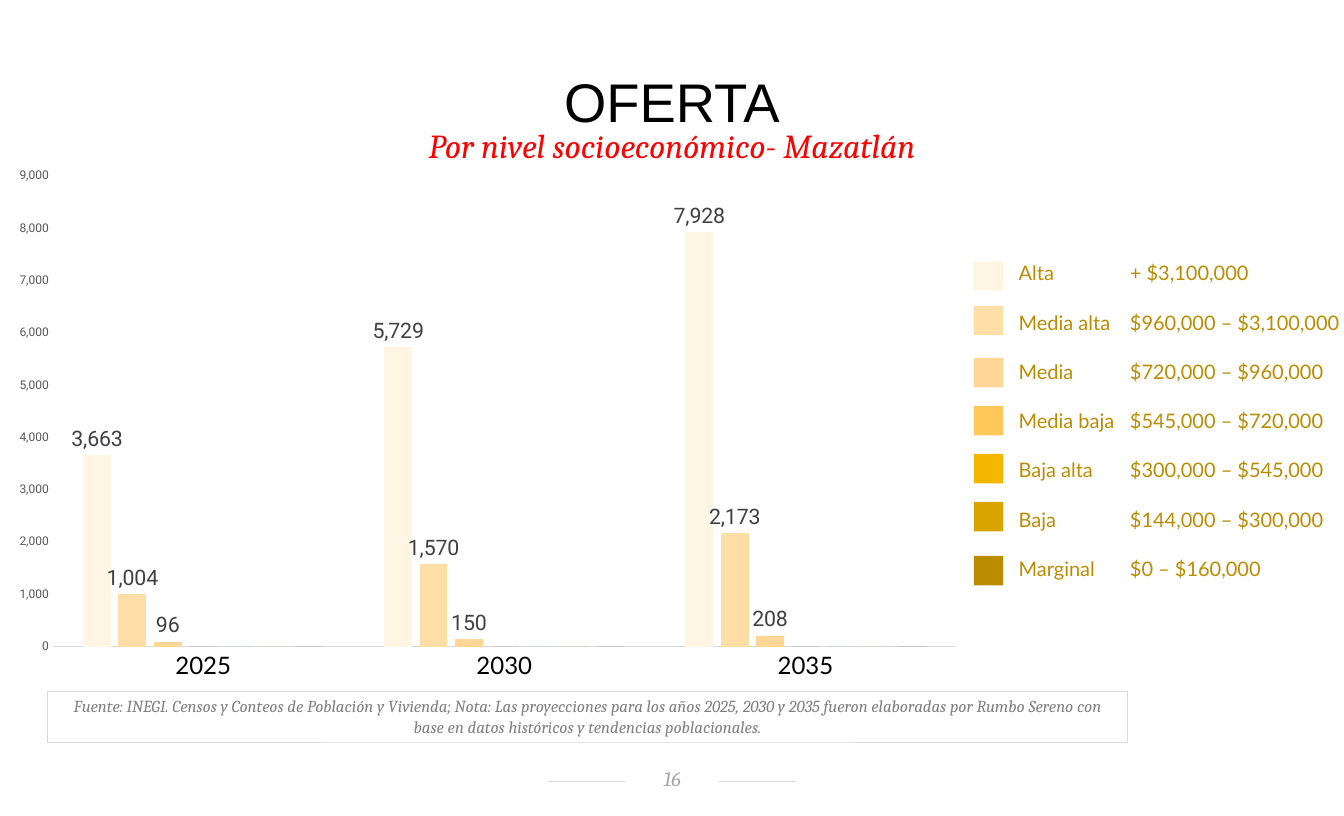
from dataclasses import dataclass

import pptx
import pptx.chart.data
import pptx.dml.color
import pptx.enum.chart
import pptx.enum.shapes
import pptx.enum.text
import pptx.oxml
import pptx.oxml.ns
import pptx.util
from lxml import etree

Pt = pptx.util.Pt
RGBColor = pptx.dml.color.RGBColor
Align = pptx.enum.text.PP_ALIGN
Anchor = pptx.enum.text.MSO_ANCHOR

BLACK = RGBColor(0x00, 0x00, 0x00)
WHITE = RGBColor(0xFF, 0xFF, 0xFF)
RED = RGBColor(0xFF, 0x00, 0x00)
GOLD = RGBColor(0xBC, 0x8C, 0x00)
RULE_GREY = RGBColor(0xD9, 0xD9, 0xD9)
PAGE_GREY = RGBColor(0xA6, 0xA6, 0xA6)
NOTE_GREY = RGBColor(0x80, 0x80, 0x80)
AXIS_GREY = RGBColor(0x59, 0x59, 0x59)
LABEL_GREY = RGBColor(0x40, 0x40, 0x40)


@dataclass
class Box:
    left: float
    top: float
    width: float
    height: float

    def lengths(self):
        return Pt(self.left), Pt(self.top), Pt(self.width), Pt(self.height)


@dataclass
class Level:
    name: str
    price: str
    color: RGBColor
    swatch_top: float


@dataclass
class Supply:
    values: tuple
    color: RGBColor


LEVELS = [
    Level("Alta", "+ $3,100,000", RGBColor(0xFF, 0xF5, 0xE5), 196),
    Level("Media alta", "$960,000 – $3,100,000", RGBColor(0xFF, 0xDD, 0xA7), 229.5),
    Level("Media", "$720,000 – $960,000", RGBColor(0xFF, 0xD6, 0x95), 268.5),
    Level("Media baja", "$545,000 – $720,000", RGBColor(0xFF, 0xC8, 0x59), 304.5),
    Level("Baja alta", "$300,000 – $545,000", RGBColor(0xF3, 0xB7, 0x00), 340.5),
    Level("Baja", "$144,000 – $300,000", RGBColor(0xDA, 0xA4, 0x00), 376.5),
    Level("Marginal", "$0 – $160,000", GOLD, 417),
]
YEARS = ["2025", "2030", "2035"]
NONE_OFFERED = (0, 0, 0)
SUPPLIES = [
    Supply((3663, 5729, 7928), LEVELS[0].color),
    Supply((1004, 1570, 2173), LEVELS[1].color),
    Supply((96, 150, 208), LEVELS[2].color),
    Supply(NONE_OFFERED, RGBColor(0x80, 0x64, 0xA2)),
    Supply(NONE_OFFERED, RGBColor(0x4B, 0xAC, 0xC6)),
    Supply(NONE_OFFERED, RGBColor(0xF7, 0x96, 0x46)),
    Supply(NONE_OFFERED, RGBColor(0x2C, 0x4D, 0x75)),
]


def set_font(font, name: str, size: float, color: RGBColor, italic: bool = False) -> None:
    font.name = name
    font.size = Pt(size)
    font.color.rgb = color
    font.italic = italic


def write(shape, text: str, name: str, size: float, color: RGBColor,
          italic: bool = False, anchor=Anchor.TOP):
    """Put one centred paragraph in a shape and return the paragraph."""
    frame = shape.text_frame
    frame.text = text
    frame.word_wrap = True
    frame.auto_size = pptx.enum.text.MSO_AUTO_SIZE.NONE
    frame.vertical_anchor = anchor
    paragraph = frame.paragraphs[0]
    paragraph.alignment = Align.CENTER
    set_font(paragraph.font, name, size, color, italic)
    return paragraph


def place(shape, box: Box) -> None:
    shape.left, shape.top, shape.width, shape.height = box.lengths()


def add_rectangle(slide, box: Box, fill=None, line=None):
    shape = slide.shapes.add_shape(pptx.enum.shapes.MSO_SHAPE.RECTANGLE, *box.lengths())
    shape.shadow.inherit = False
    if fill is None:
        shape.fill.background()
    else:
        shape.fill.solid()
        shape.fill.fore_color.rgb = fill
    if line is None:
        shape.line.fill.background()
    else:
        shape.line.color.rgb = line
        shape.line.width = Pt(0.75)
    return shape


def add_page_number(slide) -> None:
    rule = slide.shapes.add_connector(pptx.enum.shapes.MSO_CONNECTOR.STRAIGHT,
                                      Pt(411), Pt(586), Pt(597), Pt(586))
    rule.line.color.rgb = RULE_GREY
    rule.line.width = Pt(0.75)
    etree.SubElement(rule.line._get_or_add_ln().getparent(),
                     pptx.oxml.ns.qn("a:effectLst"))
    number = add_rectangle(slide, Box(468.5, 574.5, 71, 21), fill=WHITE)
    write(number, "16", "Cambria", 15.4, PAGE_GREY, True, Anchor.MIDDLE)
    number.text_frame.margin_top = Pt(1.5)


def add_price_table(slide) -> None:
    frame = slide.shapes.add_table(len(LEVELS), 2, *Box(764, 186.5, 246, 258.5).lengths())
    table = frame.table
    table.first_row = table.horz_banding = False
    table.columns[0].width, table.columns[1].width = Pt(83.5), Pt(162.5)
    for row, level in enumerate(LEVELS):
        for column, text in enumerate((level.name, level.price)):
            cell = table.cell(row, column)
            cell.fill.background()
            cell.vertical_anchor = Anchor.MIDDLE
            cell.margin_left = cell.margin_right = cell.margin_top = cell.margin_bottom = 0
            cell.text = text
            set_font(cell.text_frame.paragraphs[0].font, "Lato", 15, GOLD)


def fix_plot_area(chart, x: float, y: float, w: float, h: float) -> None:
    """Set the inner plot area as fractions of the chart."""
    plot_area = chart.plots[0]._element.getparent()
    for old in plot_area.findall(pptx.oxml.ns.qn("c:layout")):
        plot_area.remove(old)
    sizes = "".join(f'<c:{tag} val="{value}"/>'
                    for tag, value in (("x", x), ("y", y), ("w", w), ("h", h)))
    plot_area.insert(0, pptx.oxml.parse_xml(
        f'<c:layout {pptx.oxml.ns.nsdecls("c")}><c:manualLayout>'
        '<c:layoutTarget val="inner"/><c:xMode val="edge"/><c:yMode val="edge"/>'
        f'{sizes}</c:manualLayout></c:layout>'))


def add_supply_chart(slide) -> None:
    data = pptx.chart.data.CategoryChartData(number_format="#,##0")
    data.categories = YEARS
    for number, supply in enumerate(SUPPLIES, 1):
        data.add_series(f"Series {number}", supply.values)
    chart = slide.shapes.add_chart(pptx.enum.chart.XL_CHART_TYPE.COLUMN_CLUSTERED,
                                   *Box(0, 119.5, 731, 399.5).lengths(), data).chart
    chart.has_legend = chart.has_title = False
    set_font(chart.font, "Calibri", 10, BLACK)
    fix_plot_area(chart, 0.054, 0.031, 0.927, 0.884)

    plot = chart.plots[0]
    plot.gap_width, plot.overlap, plot.vary_by_categories = 219, -27, False
    for series, supply in zip(plot.series, SUPPLIES):
        series.format.fill.solid()
        series.format.fill.fore_color.rgb = supply.color
        if any(supply.values):
            labels = series.data_labels
            labels.show_value = True
            labels.number_format, labels.number_format_is_linked = "#,##0", False
            labels.position = pptx.enum.chart.XL_LABEL_POSITION.OUTSIDE_END
            set_font(labels.font, "Roboto", 16, LABEL_GREY)

    years, units = chart.category_axis, chart.value_axis
    for axis in (years, units):
        axis.has_major_gridlines = False
        axis.major_tick_mark = axis.minor_tick_mark = pptx.enum.chart.XL_TICK_MARK.NONE
    set_font(years.tick_labels.font, "Lato", 18, BLACK)
    years.format.line.color.rgb = RULE_GREY
    years.format.line.width = Pt(0.75)
    set_font(units.tick_labels.font, "Roboto", 9, AXIS_GREY)
    units.tick_labels.number_format = "#,##0"
    units.tick_labels.number_format_is_linked = False
    units.format.line.fill.background()
    units.minimum_scale, units.maximum_scale, units.major_unit = 0, 9000, 1000


def main() -> None:
    deck = pptx.Presentation()
    deck.slide_width, deck.slide_height = Pt(1008), Pt(612)
    slide = deck.slides.add_slide(deck.slide_layouts[0])
    add_page_number(slide)

    source_note = add_rectangle(slide, Box(35.5, 518.5, 810, 38), line=RULE_GREY)
    write(source_note,
          "Fuente: INEGI. Censos y Conteos de Población y Vivienda; Nota: Las proyecciones "
          "para los años 2025, 2030 y 2035 fueron elaboradas por Rumbo Sereno con base "
          "en datos históricos y tendencias poblacionales.",
          "Cambria", 12.6, NOTE_GREY, True)

    title, subtitle = slide.placeholders
    place(title, Box(35.5, 61, 937, 43))
    write(title, "OFERTA", "Arial", 40.8, BLACK).line_spacing = 0.7
    place(subtitle, Box(-25, 90, 1058, 38))
    heading = write(subtitle, "Por nivel socioeconómico- Mazatlán", "Cambria", 25.2, RED, True)
    heading.space_before = Pt(0)

    add_price_table(slide)
    for level in LEVELS:
        add_rectangle(slide, Box(730.5, level.swatch_top, 22, 22), fill=level.color)
    add_supply_chart(slide)
    deck.save("out.pptx")


if __name__ == "__main__":
    main()
